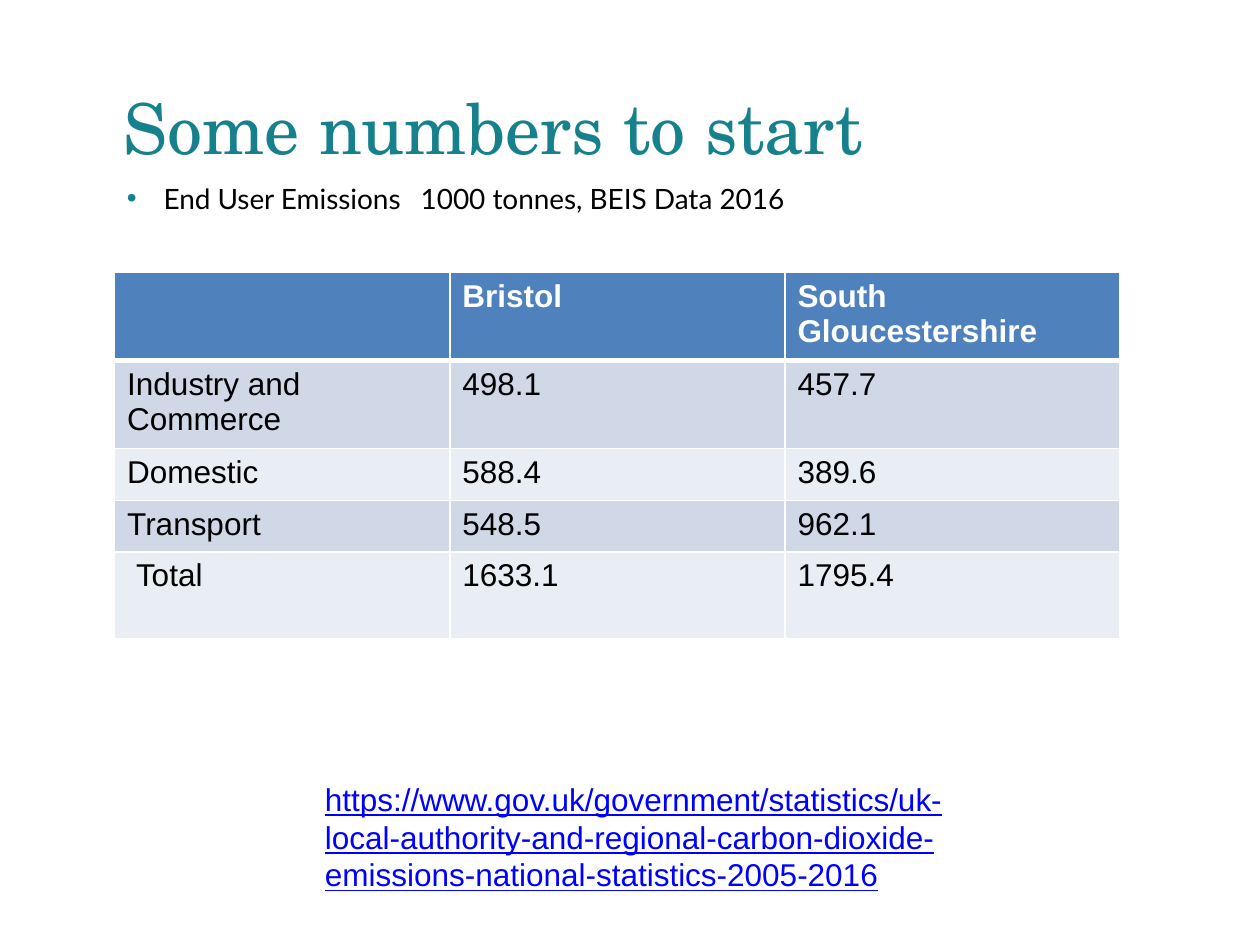
from pptx import Presentation
from pptx.dml.color import RGBColor as RGB
from pptx.enum.text import MSO_ANCHOR as Anchor, MSO_AUTO_SIZE as Auto, PP_ALIGN as Align
from pptx.oxml import parse_xml
from pptx.oxml.ns import nsdecls
from pptx.util import Inches as In, Pt

"""Build a slide that compares emissions in two districts."""

TEAL, BLACK, WHITE, BLUE = "16818D", "000000", "FFFFFF", "4F81BD"
BANDS = ["E9EDF4", "D0D8E8"]


def style(para, name, size, color, bold=False):
    font = para.font
    font.name, font.size, font.bold = name, Pt(size), bold
    font.color.rgb = RGB.from_string(color)


def edge(cell, side, width):
    cell._tc.get_or_add_tcPr().append(parse_xml(
        f'<a:ln{side} {nsdecls("a")} w="{Pt(width)}"><a:solidFill>'
        f'<a:srgbClr val="{WHITE}"/></a:solidFill></a:ln{side}>'))


deck = Presentation()
deck.slide_width, deck.slide_height = In(10), In(7.5)
slide = deck.slides.add_slide(deck.slide_layouts[5])
shapes = slide.shapes
left = In(0.91)

title = shapes.title
title.left, title.top, title.width, title.height = In(0.98), In(0.75), In(7.13), In(0.71)
frame = title.text_frame
frame.text = "Some numbers to start"
frame.margin_left = frame.margin_top = frame.margin_right = frame.margin_bottom = 0
frame.vertical_anchor, frame.auto_size, frame.word_wrap = Anchor.TOP, Auto.NONE, True
para = frame.paragraphs[0]
para.alignment, para.line_spacing, para.space_before = Align.LEFT, Pt(42), Pt(0)
style(para, "TeX Gyre Schola", 40, TEAL)

frame = shapes.add_textbox(left, In(1.39), In(7.2), In(0.5)).text_frame
frame.word_wrap = True
para = frame.paragraphs[0]
props = para._p.get_or_add_pPr()
props.set("marL", str(In(0.29)))
props.set("indent", str(-In(0.29)))
for mark in (f'<a:buClr {nsdecls("a")}><a:srgbClr val="{TEAL}"/></a:buClr>',
             f'<a:buFont {nsdecls("a")} typeface="Arial"/>',
             f'<a:buChar {nsdecls("a")} char="•"/>'):
    props.append(parse_xml(mark))
style(para, "Lato", 16, BLACK)
for text, gap in (("End User Emissions", 0), (" ", 7.2), ("1000 tonnes, BEIS Data 2016", 0)):
    run = para.add_run()
    run.text = text
    if gap:
        run.font._element.set("spc", str(int(gap * 100)))

rows = [
    ("", "Bristol", "South Gloucestershire"),
    ("Industry and Commerce", "498.1", "457.7"),
    ("Domestic", "588.4", "389.6"),
    ("Transport", "548.5", "962.1"),
    ("Total", "1633.1", "1795.4"),
]
highs = [0.66, 0.66, 0.41, 0.41, 0.69]
table = shapes.add_table(len(rows), 3, left, In(2.16), In(7.98), In(sum(highs))).table
for col in table.columns:
    col.width = In(2.66)
for i, (row, high) in enumerate(zip(rows, highs)):
    table.rows[i].height = In(high)
    head = i == 0
    for j, text in enumerate(row):
        cell = table.cell(i, j)
        cell.text = text
        style(cell.text_frame.paragraphs[0], "Arial", 18, WHITE if head else BLACK, head)
        for side, width in (("L", 1), ("R", 1), ("T", 3 if i == 1 else 1), ("B", 3 if head else 1)):
            edge(cell, side, width)
        cell.fill.solid()
        cell.fill.fore_color.rgb = RGB.from_string(BLUE if head else BANDS[i % 2])
table.cell(len(rows) - 1, 0).margin_left = In(0.17)

frame = shapes.add_textbox(In(2.48), In(6.14), In(5.2), In(1)).text_frame
frame.word_wrap = True
para = frame.paragraphs[0]
para.text = ("https://www.gov.uk/government/statistics/uk-local-authority-and-regional-"
             "carbon-dioxide-emissions-national-statistics-2005-2016")
para.line_spacing = Pt(21.6)
style(para, "Arial", 18, "0000FF")
para.font.underline = True

deck.save("out.pptx")
